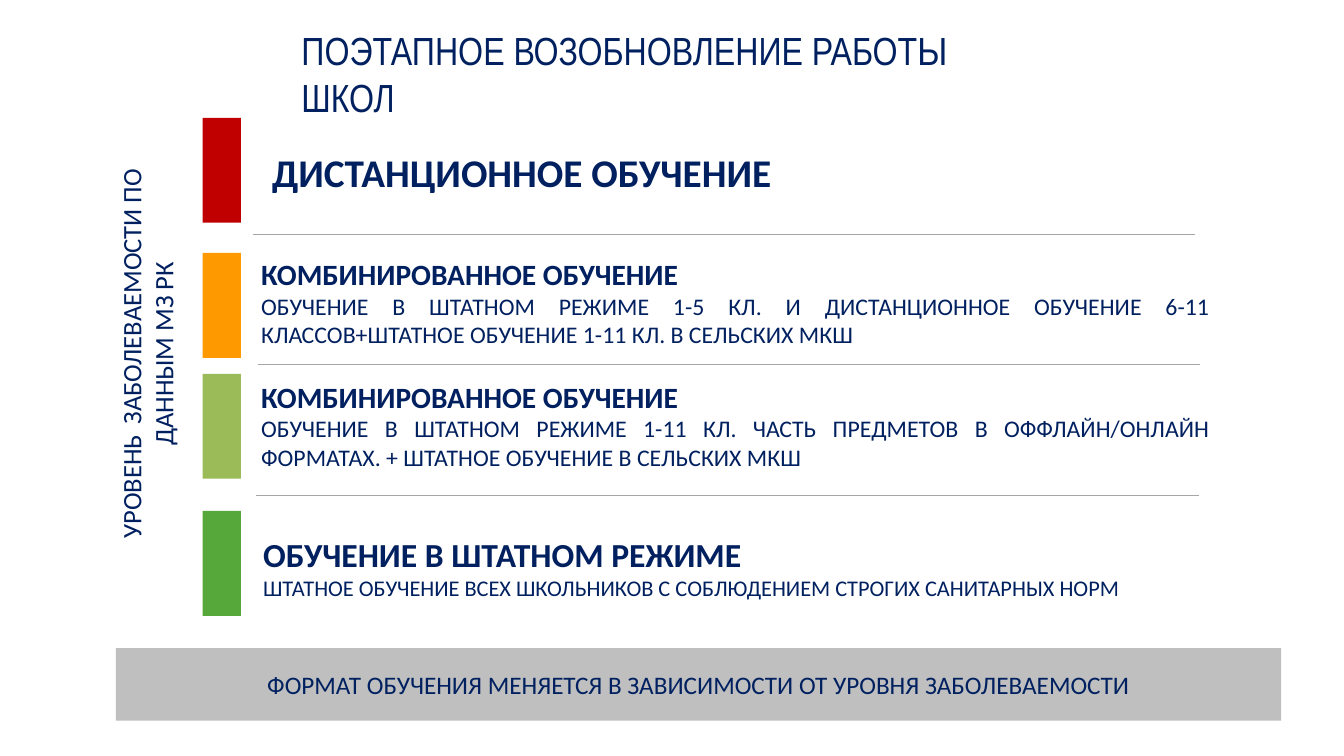
from pptx import Presentation
from pptx.util import Pt
from pptx.dml.color import RGBColor
from pptx.enum.shapes import MSO_SHAPE as Shape, MSO_CONNECTOR as Conn
from pptx.enum.text import PP_ALIGN as Align, MSO_ANCHOR as Anchor, MSO_AUTO_SIZE as Fit
from pptx.oxml.ns import qn
from lxml.etree import SubElement

# Content: bar colour and top; text left, top and width; (text, size, bold) lines
NAVY, GREY, SILVER = "002060", "A6A6A6", "BFBFBF"
TITLE = "ПОЭТАПНОЕ ВОЗОБНОВЛЕНИЕ РАБОТЫ ШКОЛ"
LEVEL = [("УРОВЕНЬ ", 19, False), (" ", 16, False),
         ("ЗАБОЛЕВАЕМОСТИ ПО ДАННЫМ МЗ РК", 19, False)]
FOOT = "ФОРМАТ ОБУЧЕНИЯ МЕНЯЕТСЯ В ЗАВИСИМОСТИ ОТ УРОВНЯ ЗАБОЛЕВАЕМОСТИ"
MIXED = "КОМБИНИРОВАННОЕ ОБУЧЕНИЕ"
STAGES = [
    ("C00000", 84.2, 190.8, 102.2, 636.5,
     [("ДИСТАНЦИОННОЕ ОБУЧЕНИЕ", 28, True)]),
    ("FF9900", 180.7, 182.9, 179.3, 684.7,
     [(MIXED, 21, True),
      ("ОБУЧЕНИЕ В ШТАТНОМ РЕЖИМЕ 1-5 КЛ. И ДИСТАНЦИОННОЕ ОБУЧЕНИЕ 6-11 "
       "КЛАССОВ+ШТАТНОЕ ОБУЧЕНИЕ 1-11 КЛ. В СЕЛЬСКИХ МКШ", 17, False)]),
    ("9BBB59", 267.1, 182.9, 267.1, 684.7,
     [(MIXED, 21, True),
      ("ОБУЧЕНИЕ В ШТАТНОМ РЕЖИМЕ 1-11 КЛ. ЧАСТЬ ПРЕДМЕТОВ В ОФФЛАЙН/ОНЛАЙН "
       "ФОРМАТАХ. + ШТАТНОЕ ОБУЧЕНИЕ В СЕЛЬСКИХ МКШ", 17, False)]),
    ("55A839", 365, 184.3, 378, 681.1,
     [("ОБУЧЕНИЕ В ШТАТНОМ РЕЖИМЕ", 24, True),
      ("ШТАТНОЕ ОБУЧЕНИЕ ВСЕХ ШКОЛЬНИКОВ С СОБЛЮДЕНИЕМ СТРОГИХ САНИТАРНЫХ НОРМ",
       16, False)]),
]
RULES = [(180.7, 167.8), (184.3, 260.6), (182.9, 354.2)]
RULE_W, BAR_X, BAR_W, BAR_H, PAD = 673.2, 144.7, 27.4, 74.9, 3.6

deck = Presentation()
deck.slide_width, deck.slide_height = Pt(960), Pt(540)
slide = deck.slides.add_slide(deck.slide_layouts[5])
shapes = slide.shapes


def tint(code):
    return RGBColor.from_string(code)


def write(para, text, size, bold=False, face="Calibri"):
    run = para.add_run()
    run.text = text
    font = run.font
    font.name, font.size, font.bold = face, Pt(size), bold
    font.color.rgb = tint(NAVY)


def setup(frame, anchor=Anchor.TOP, pad=PAD):
    frame.word_wrap, frame.auto_size = True, Fit.NONE
    frame.vertical_anchor = anchor
    frame.margin_left = frame.margin_right = Pt(pad)
    frame.margin_top = frame.margin_bottom = Pt(PAD)
    return frame


def block(x, y, w, h):
    box = shapes.add_textbox(Pt(x), Pt(y), Pt(w), Pt(h))
    setup(box.text_frame)
    return box


def bar(x, y, w, h, code):
    rect = shapes.add_shape(Shape.RECTANGLE, Pt(x), Pt(y), Pt(w), Pt(h))
    rect.shadow.inherit = False
    rect.fill.solid()
    rect.fill.fore_color.rgb = tint(code)
    rect.line.fill.background()
    return rect


# Title
title = shapes.title
title.left, title.top, title.width, title.height = Pt(208.1), Pt(15.1), Pt(510.5), Pt(41)
head = setup(title.text_frame, pad=7.2).paragraphs[0]
head.alignment = Align.LEFT
write(head, TITLE, 28, face="Arial Narrow")

# Stages: colour bar and text
for code, bar_y, x, y, w, lines in STAGES:
    bar(BAR_X, bar_y, BAR_W, BAR_H, code)
    frame = block(x, y, w, 39 if len(lines) == 1 else BAR_H).text_frame
    for i, line in enumerate(lines):
        para = frame.add_paragraph() if i else frame.paragraphs[0]
        para.alignment = Align.JUSTIFY
        write(para, *line)

# Dividers
for x, y in RULES:
    rule = shapes.add_connector(Conn.STRAIGHT, Pt(x), Pt(y), Pt(x + RULE_W), Pt(y))
    rule.line.color.rgb = tint(GREY)
    rule.line.width = Pt(0.75)
    SubElement(rule._element.spPr, qn("a:effectLst"))

# Vertical label
label = block(-47.5, 220.3, 316.8, 64.8)
label.rotation = 270
para = label.text_frame.paragraphs[0]
para.alignment = Align.CENTER
for part in LEVEL:
    write(para, *part)

# Footer band
band = bar(82.8, 463, 832.3, 51.8, SILVER)
para = setup(band.text_frame, Anchor.MIDDLE).paragraphs[0]
para.alignment = Align.CENTER
write(para, FOOT, 18)

deck.save("out.pptx")
